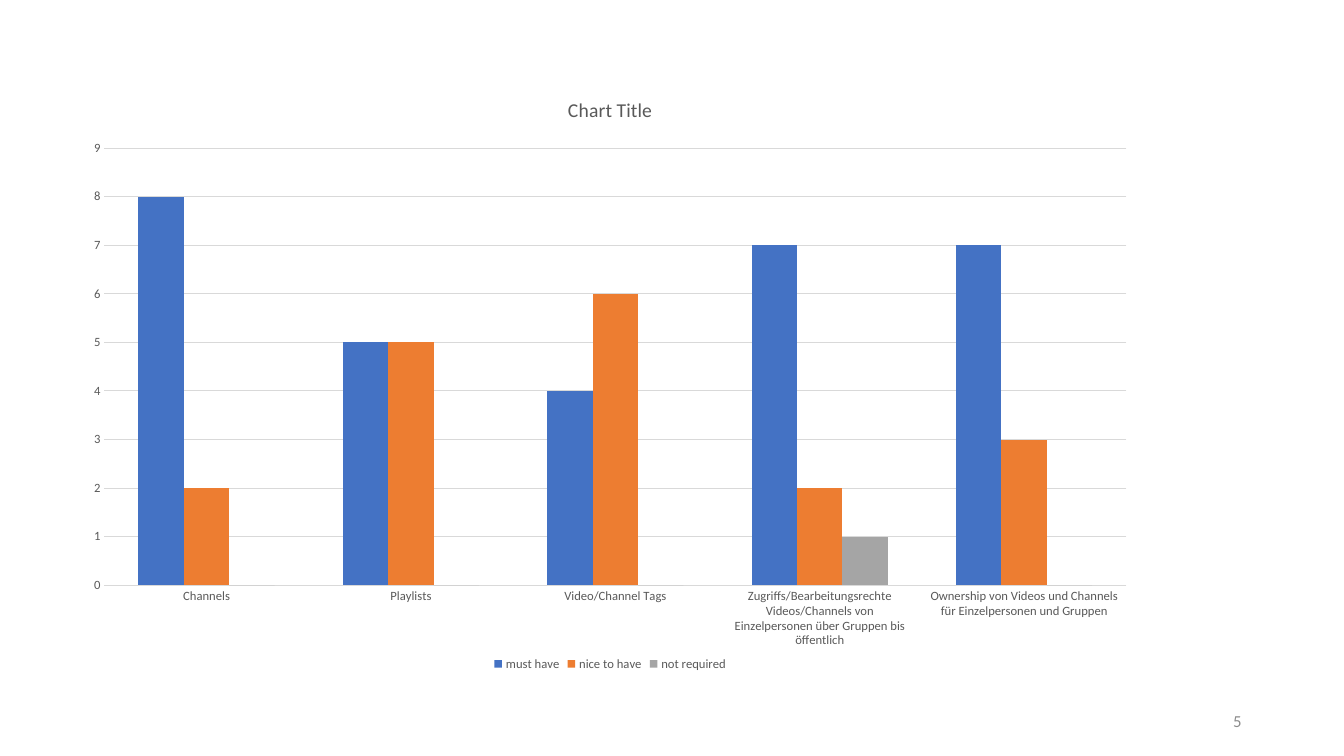
from pptx import Presentation
from pptx.chart.data import CategoryChartData
from pptx.dml.color import RGBColor
from pptx.enum.chart import XL_CHART_TYPE, XL_LEGEND_POSITION, XL_TICK_MARK
from pptx.enum.text import MSO_ANCHOR, PP_ALIGN
from pptx.util import Inches, Pt

COLORS = {"text": "595959", "number": "8C8C8C", "grid": "D9D9D9",
          "must have": "4472C4", "nice to have": "ED7D31", "not required": "A5A5A5"}
CATEGORIES = [
    "Channels",
    "Playlists",
    "Video/Channel Tags",
    "Zugriffs/Bearbeitungsrechte Videos/Channels von Einzelpersonen über Gruppen bis öffentlich",
    "Ownership von Videos und Channels für Einzelpersonen und Gruppen",
]
RATINGS = {
    "must have": (8, 5, 4, 7, 7),
    "nice to have": (2, 5, 6, 2, 3),
    "not required": (0, 0, 0, 1, 0),
}


class SlideBuilder:
    """Places elements on a grid of 160 columns by 90 rows."""
    FONT = "Calibri"
    COLUMNS, ROWS = 160, 90

    def __init__(self, prs):
        self.slide = prs.slides.add_slide(prs.slide_layouts[6])
        self.col = prs.slide_width / self.COLUMNS
        self.row = prs.slide_height / self.ROWS

    def box(self, col, row, cols, rows):
        return (round(col * self.col), round(row * self.row),
                round(cols * self.col), round(rows * self.row))

    def color(self, name):
        return RGBColor.from_string(COLORS[name])

    def style(self, font, size, color="text"):
        font.name, font.size, font.bold = self.FONT, Pt(size), False
        font.color.rgb = self.color(color)

    def page_number(self, text, *place):
        tf = self.slide.shapes.add_textbox(*self.box(*place)).text_frame
        tf.word_wrap = True
        tf.vertical_anchor = MSO_ANCHOR.MIDDLE
        p = tf.paragraphs[0]
        p.text, p.alignment = text, PP_ALIGN.RIGHT
        self.style(p.runs[0].font, 12, "number")

    def column_chart(self, title, categories, series, *place):
        data = CategoryChartData()
        data.categories = categories
        for name, values in series.items():
            data.add_series(name, values)
        chart = self.slide.shapes.add_chart(
            XL_CHART_TYPE.COLUMN_CLUSTERED, *self.box(*place), data).chart
        self.style(chart.font, 10)

        p = chart.chart_title.text_frame.paragraphs[0]
        p.text = title
        self.style(p.runs[0].font, 14)
        chart.chart_title.include_in_layout = False

        chart.has_legend = True
        chart.legend.position = XL_LEGEND_POSITION.BOTTOM
        chart.legend.include_in_layout = False
        self.style(chart.legend.font, 9)

        for axis in (chart.category_axis, chart.value_axis):
            axis.major_tick_mark = axis.minor_tick_mark = XL_TICK_MARK.NONE
            axis.format.line.fill.background()
            self.style(axis.tick_labels.font, 9)
        grid = chart.value_axis.major_gridlines.format.line
        grid.width, grid.color.rgb = Pt(0.75), self.color("grid")

        plot = chart.plots[0]
        plot.gap_width, plot.overlap, plot.vary_by_categories = 150, 0, False
        for ser in plot.series:
            ser.format.fill.solid()
            ser.format.fill.fore_color.rgb = self.color(ser.name)


def main():
    prs = Presentation()
    prs.slide_width, prs.slide_height = Inches(13.33), Inches(7.5)
    s = SlideBuilder(prs)
    s.page_number("5", 113, 83.4, 36, 4.8)
    s.column_chart("Chart Title", CATEGORIES, RATINGS, 8.64, 9, 128, 71.4)
    prs.save("out.pptx")


if __name__ == "__main__":
    main()
